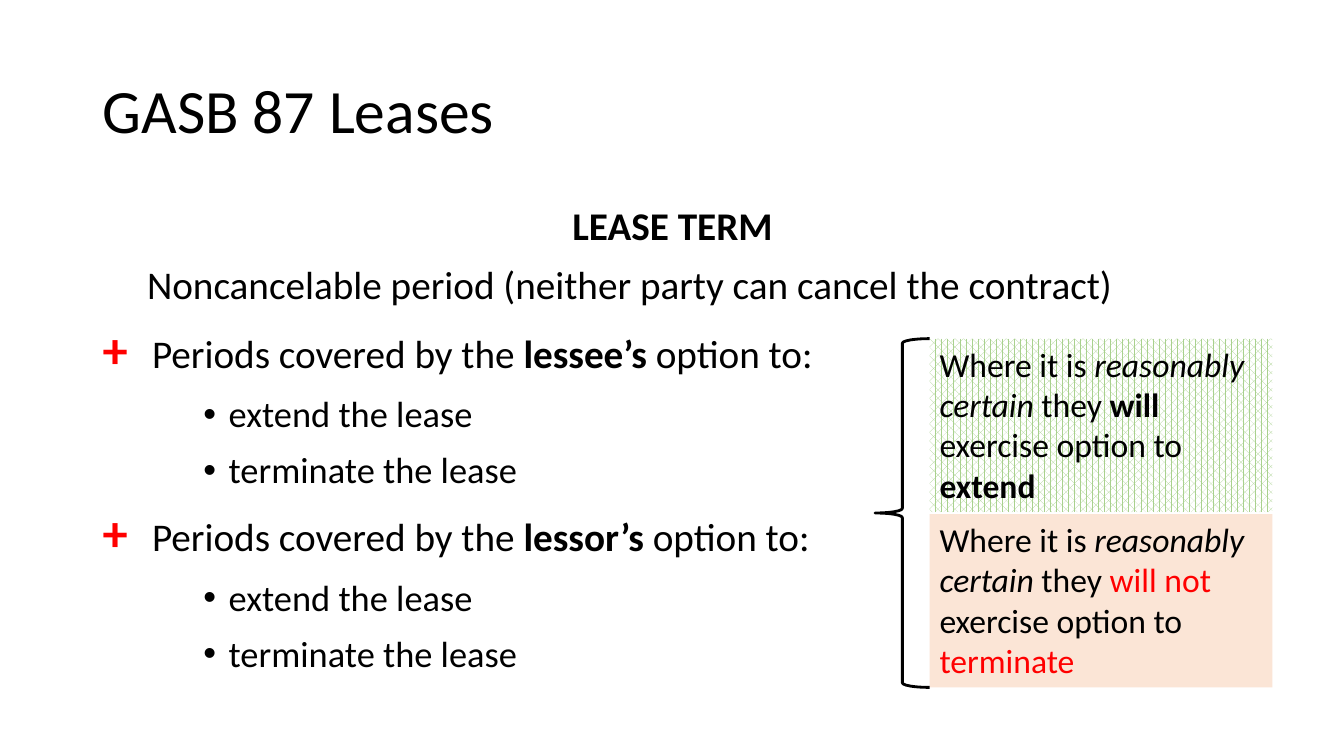
from lxml.etree import SubElement
from pptx import Presentation
from pptx.dml.color import RGBColor
from pptx.enum.dml import MSO_PATTERN
from pptx.enum.shapes import MSO_SHAPE
from pptx.enum.text import MSO_ANCHOR, MSO_AUTO_SIZE, PP_ALIGN
from pptx.oxml.ns import qn
from pptx.util import Inches, Pt

BLACK = RGBColor(0, 0, 0)
WHITE = RGBColor(255, 255, 255)
RED = RGBColor(255, 0, 0)
GREEN = RGBColor(0xA9, 0xD1, 0x8E)
PEACH = RGBColor(0xFB, 0xE5, 0xD6)
FONT = "Calibri"

# A run is plain text or (text, format); a paragraph is a list of runs.
BOLD, ITALIC, WARN = {"bold": True}, {"italic": True}, {"color": RED}
PLUS = {"bold": True, "color": RED, "size": 36}

TITLE = "GASB 87 Leases"
HEAD = "LEASE TERM"
PERIOD = "Noncancelable period (neither party can cancel the contract)"
PARTIES = ["lessee’s", "lessor’s"]
CHOICES = ["extend the lease", "terminate the lease"]
START = ["Where it is ", ("reasonably certain", ITALIC), " they "]
EXTEND = START + [("will", BOLD), " exercise option to ", ("extend", BOLD)]
STOP = START + [("will not ", WARN), "exercise option to ", ("terminate", WARN)]

LEFT, WIDTH = 0.92, 11.5
BOX_X, BOX_Y, BOX_W, BOX_H, STEP = 9.22, 3.36, 3.4, 1.72, 1.74
BRACE_W = 0.54


def write(para, runs, size=28, bold=False, align=PP_ALIGN.LEFT, space=None,
          line=None, margin=0, indent=0, bullet=None):
    """Fill a paragraph with runs; margin and indent are in inches."""
    para.alignment, para.line_spacing = align, line
    if space is not None:
        para.space_before = para.space_after = Pt(space)
    props = para._p.get_or_add_pPr()
    props.set("marL", str(Inches(margin)))
    props.set("indent", str(Inches(indent)))
    if bullet:
        SubElement(props, qn("a:buFont")).set("typeface", "Arial")
        SubElement(props, qn("a:buChar")).set("char", bullet)
    for item in runs:
        text, look = (item, {}) if isinstance(item, str) else item
        run = para.add_run()
        run.text = text
        font = run.font
        font.name = FONT
        font.size = Pt(look.get("size", size))
        font.bold = look.get("bold", bold)
        font.italic = look.get("italic", False)
        font.color.rgb = look.get("color", BLACK)


def add_text(slide, top, height, anchor):
    box = slide.shapes.add_textbox(*map(Inches, (LEFT, top, WIDTH, height)))
    frame = box.text_frame
    frame.word_wrap, frame.vertical_anchor = True, anchor
    return frame


def add_plain(slide, kind, *place):
    shape = slide.shapes.add_shape(kind, *map(Inches, place))
    shape.shadow.inherit = False
    shape.fill.background()
    shape.line.fill.background()
    return shape


def add_note(slide, row, runs):
    note = add_plain(slide, MSO_SHAPE.RECTANGLE,
                     BOX_X, BOX_Y + row * STEP, BOX_W, BOX_H)
    frame = note.text_frame
    frame.word_wrap, frame.vertical_anchor = True, MSO_ANCHOR.TOP
    frame.auto_size = MSO_AUTO_SIZE.SHAPE_TO_FIT_TEXT
    write(frame.paragraphs[0], runs, size=24)
    return note.fill


def main():
    deck = Presentation()
    deck.slide_width, deck.slide_height = Inches(13.33), Inches(7.5)
    slide = deck.slides.add_slide(deck.slide_layouts[6])

    title = add_text(slide, 0.4, 1.45, MSO_ANCHOR.MIDDLE)
    write(title.paragraphs[0], [TITLE], size=44, line=0.9)

    body = add_text(slide, 2, 5.31, MSO_ANCHOR.TOP)
    gaps = {"space": 6, "line": 0.9}
    write(body.paragraphs[0], [HEAD], bold=True, align=PP_ALIGN.CENTER, **gaps)
    write(body.add_paragraph(), [PERIOD], margin=0.44, **gaps)
    for party in PARTIES:
        runs = [("+", PLUS), "\tPeriods covered by the ", (party, BOLD),
                " option to:"]
        write(body.add_paragraph(), runs, margin=0.49, indent=-0.49, **gaps)
        for choice in CHOICES:
            para = body.add_paragraph()
            para.level = 2
            write(para, [choice], size=26, margin=1.25, indent=-0.25,
                  bullet="•", **gaps)

    fill = add_note(slide, 0, EXTEND)
    fill.patterned()
    fill.pattern = MSO_PATTERN.PERCENT_60
    fill.fore_color.rgb, fill.back_color.rgb = GREEN, WHITE
    fill = add_note(slide, 1, STOP)
    fill.solid()
    fill.fore_color.rgb = PEACH

    brace = add_plain(slide, MSO_SHAPE.LEFT_BRACE,
                      BOX_X - BRACE_W, BOX_Y, BRACE_W, STEP + BOX_H)
    brace.line.color.rgb, brace.line.width = BLACK, Pt(2)

    deck.save("out.pptx")


if __name__ == "__main__":
    main()
